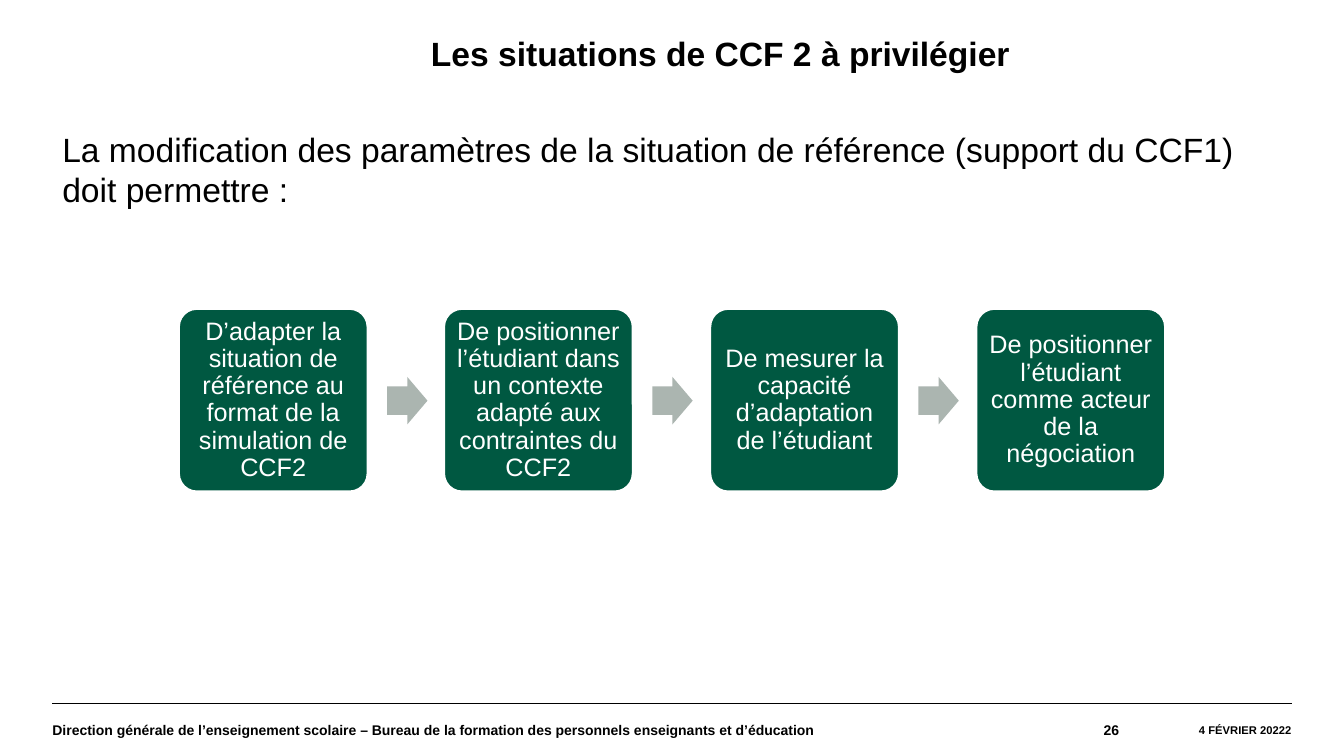
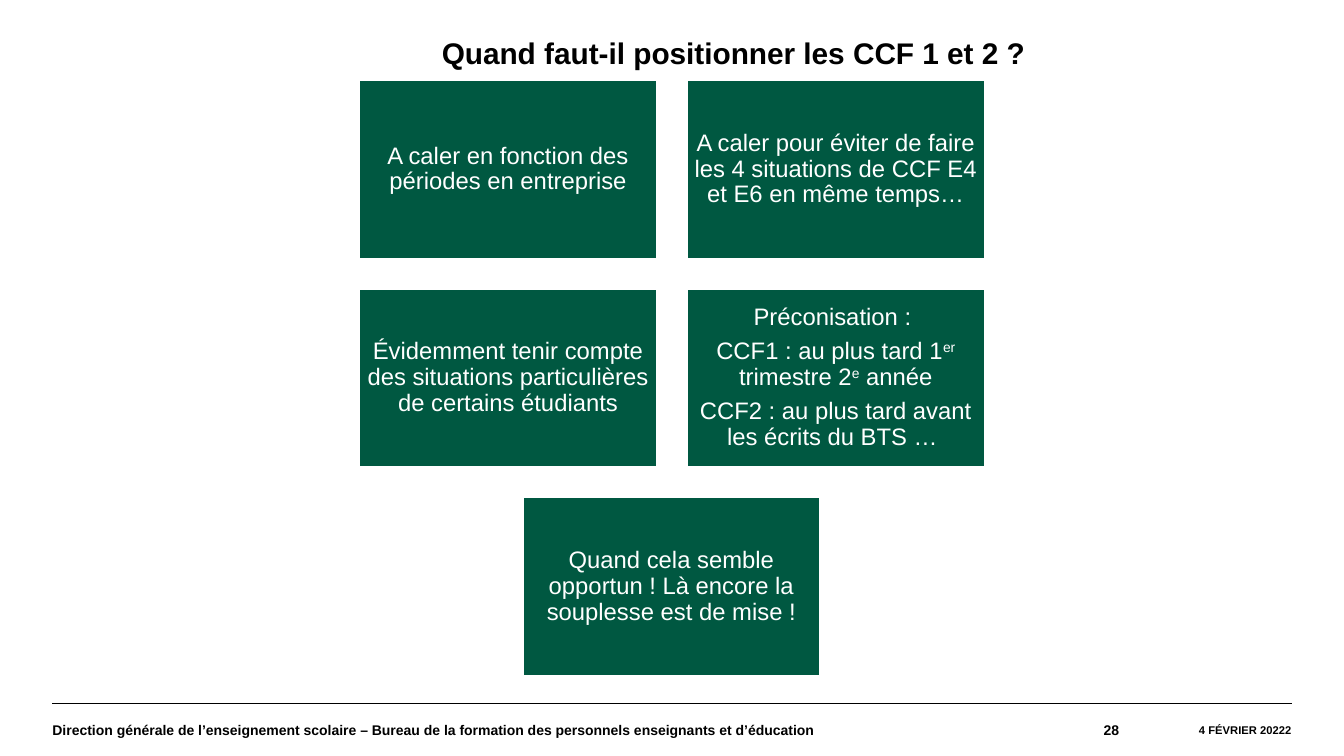
"""Build two slides on the CCF situations, their goals and their timing."""
from dataclasses import dataclass

from lxml import etree
from pptx import Presentation
from pptx.dml.color import RGBColor
from pptx.enum.shapes import MSO_CONNECTOR, MSO_SHAPE
from pptx.enum.text import MSO_ANCHOR, PP_ALIGN
from pptx.oxml.ns import qn
from pptx.util import Pt

LEFT, CENTER, RIGHT = PP_ALIGN.LEFT, PP_ALIGN.CENTER, PP_ALIGN.RIGHT
TOP, MIDDLE = MSO_ANCHOR.TOP, MSO_ANCHOR.MIDDLE
RECTANGLE, ROUNDED = MSO_SHAPE.RECTANGLE, MSO_SHAPE.ROUNDED_RECTANGLE
ARROW, STRAIGHT = MSO_SHAPE.RIGHT_ARROW, MSO_CONNECTOR.STRAIGHT

EMU_PER_PX = 9144
SLIDE_W, SLIDE_H = 1333, 750
FONT = "Arial"
BLACK, WHITE, GREEN, GREY = "000000", "FFFFFF", "005841", "ABB5B0"
FOOTER_TOP, FOOTER_H = 698, 52
FOOTER_LEFT, FOOTER_RIGHT = 52, 1281
SUPERSCRIPT_MARK = "^"


@dataclass(frozen=True)
class Box:
    left: int
    top: int
    width: int
    height: int

    def emu(self) -> list[int]:
        return [px(v) for v in (self.left, self.top, self.width, self.height)]


@dataclass(frozen=True)
class TextStyle:
    size: float
    color: str = BLACK
    bold: bool = False
    align: PP_ALIGN = LEFT
    anchor: MSO_ANCHOR = TOP
    inset_x: int = 10
    inset_y: int = 5
    line_spacing: float = 1.0
    space_after: float = 0


@dataclass(frozen=True)
class FooterPart:
    text: str
    box: Box
    style: TextStyle


def footer_style(size: float, align: PP_ALIGN) -> TextStyle:
    return TextStyle(size, bold=True, align=align, anchor=MIDDLE, inset_x=0, inset_y=0)


def card_style(size: float) -> TextStyle:
    return TextStyle(size, WHITE, align=CENTER, anchor=MIDDLE, inset_x=7, inset_y=7,
                     line_spacing=0.9, space_after=6)


FOOTER = (
    FooterPart("Direction générale de l’enseignement scolaire – Bureau de la formation "
               "des personnels enseignants et d’éducation",
               Box(FOOTER_LEFT, FOOTER_TOP, 861, FOOTER_H), footer_style(10, LEFT)),
    FooterPart("4 FÉVRIER 20222",
               Box(1110, FOOTER_TOP, 171, FOOTER_H), footer_style(8, RIGHT)),
)
NUMBER_BOX = Box(913, FOOTER_TOP, 197, FOOTER_H)

GOALS = (
    "D’adapter la situation de référence au format de la simulation de CCF2",
    "De positionner l’étudiant dans un contexte adapté aux contraintes du CCF2",
    "De mesurer la capacité d’adaptation de l’étudiant",
    "De positionner l’étudiant comme acteur de la négociation",
)
GOALS_LEFT, GOALS_RIGHT = 177, 1156
GOAL_TOP, GOAL_W, GOAL_H = 306, 188, 182
ARROW_OFFSET, ARROW_TOP, ARROW_W, ARROW_H = 207, 374, 40, 47

TIMING_ROWS = (
    (("A caler en fonction des périodes en entreprise",),
     ("A caler pour éviter de faire les 4 situations de CCF E4 et E6 en même temps…",)),
    (("Évidemment tenir compte des situations particulières de certains étudiants",),
     ("Préconisation : ",
      "CCF1 : au plus tard 1^er^ trimestre 2^e^ année",
      "CCF2 : au plus tard avant les écrits du BTS … ")),
    (("Quand cela semble opportun ! Là encore la souplesse est de mise !",),),
)
TIMING_TOP, TIMING_W, TIMING_H, TIMING_GAP = 79, 296, 178, 29


def px(value: int) -> int:
    return value * EMU_PER_PX


def rgb(color: str) -> RGBColor:
    return RGBColor.from_string(color)


def write(shape, paragraphs: tuple[str, ...], style: TextStyle) -> None:
    frame = shape.text_frame
    frame.word_wrap = True
    frame.vertical_anchor = style.anchor
    frame.margin_left = frame.margin_right = px(style.inset_x)
    frame.margin_top = frame.margin_bottom = px(style.inset_y)
    for index, content in enumerate(paragraphs):
        paragraph = frame.add_paragraph() if index else frame.paragraphs[0]
        paragraph.alignment = style.align
        paragraph.line_spacing = style.line_spacing
        paragraph.space_after = Pt(style.space_after)
        for position, part in enumerate(content.split(SUPERSCRIPT_MARK)):
            run = paragraph.add_run()
            run.text = part
            run.font.name = FONT
            run.font.size = Pt(style.size)
            run.font.bold = style.bold
            run.font.color.rgb = rgb(style.color)
            if position % 2:
                run._r.get_or_add_rPr().set("baseline", "30000")


def add_text(slide, text: str, box: Box, style: TextStyle) -> None:
    write(slide.shapes.add_textbox(*box.emu()), (text,), style)


def add_filled(slide, kind: MSO_SHAPE, box: Box, fill: str):
    shape = slide.shapes.add_shape(kind, *box.emu())
    shape.shadow.inherit = False
    shape.fill.solid()
    shape.fill.fore_color.rgb = rgb(fill)
    shape.line.fill.background()
    return shape


def add_card(slide, kind: MSO_SHAPE, box: Box, paragraphs: tuple[str, ...], size: float):
    card = add_filled(slide, kind, box, GREEN)
    card.line.color.rgb = rgb(WHITE)
    card.line.width = Pt(2)
    write(card, paragraphs, card_style(size))
    return card


def add_base_slide(deck, number: int, title: str, title_box: Box, title_size: float):
    slide = deck.slides.add_slide(deck.slide_layouts[6])
    rule = slide.shapes.add_connector(STRAIGHT, px(FOOTER_LEFT), px(FOOTER_TOP),
                                      px(FOOTER_RIGHT), px(FOOTER_TOP))
    rule.line.color.rgb = rgb(BLACK)
    rule.line.width = Pt(0.8)
    etree.SubElement(rule._element.spPr, qn("a:effectLst"))
    for part in FOOTER:
        add_text(slide, part.text, part.box, part.style)
    add_text(slide, str(number), NUMBER_BOX, footer_style(10, RIGHT))
    add_text(slide, title, title_box, TextStyle(title_size, bold=True, align=CENTER))
    return slide


def build_goals(deck) -> None:
    slide = add_base_slide(deck, 26, "Les situations de CCF 2 à privilégier",
                           Box(47, 28, 1335, 91), 24)
    add_text(slide, "La modification des paramètres de la situation de référence "
                    "(support du CCF1) doit permettre :",
             Box(52, 123, 1244, 91), TextStyle(24))
    last = len(GOALS) - 1
    for index, goal in enumerate(GOALS):
        left = GOALS_LEFT + (GOALS_RIGHT - GOAL_W - GOALS_LEFT) * index // last
        card = add_card(slide, ROUNDED, Box(left, GOAL_TOP, GOAL_W, GOAL_H), (goal,), 18)
        card.adjustments[0] = 0.1
        if index < last:
            arrow = add_filled(slide, ARROW,
                               Box(left + ARROW_OFFSET, ARROW_TOP, ARROW_W, ARROW_H), GREY)
            arrow.adjustments[0] = 0.6
            arrow.adjustments[1] = 0.5


def build_timing(deck) -> None:
    slide = add_base_slide(deck, 28, "Quand faut-il positionner les CCF 1 et 2 ?",
                           Box(121, 30, 1213, 46), 21.3)
    for row, cards in enumerate(TIMING_ROWS):
        row_width = len(cards) * (TIMING_W + TIMING_GAP) - TIMING_GAP
        row_left = (SLIDE_W - row_width) // 2
        top = TIMING_TOP + row * (TIMING_H + TIMING_GAP)
        for column, paragraphs in enumerate(cards):
            left = row_left + column * (TIMING_W + TIMING_GAP)
            add_card(slide, RECTANGLE, Box(left, top, TIMING_W, TIMING_H), paragraphs, 17)


def main() -> None:
    deck = Presentation()
    deck.slide_width, deck.slide_height = px(SLIDE_W), px(SLIDE_H)
    build_goals(deck)
    build_timing(deck)
    deck.save("out.pptx")


if __name__ == "__main__":
    main()
